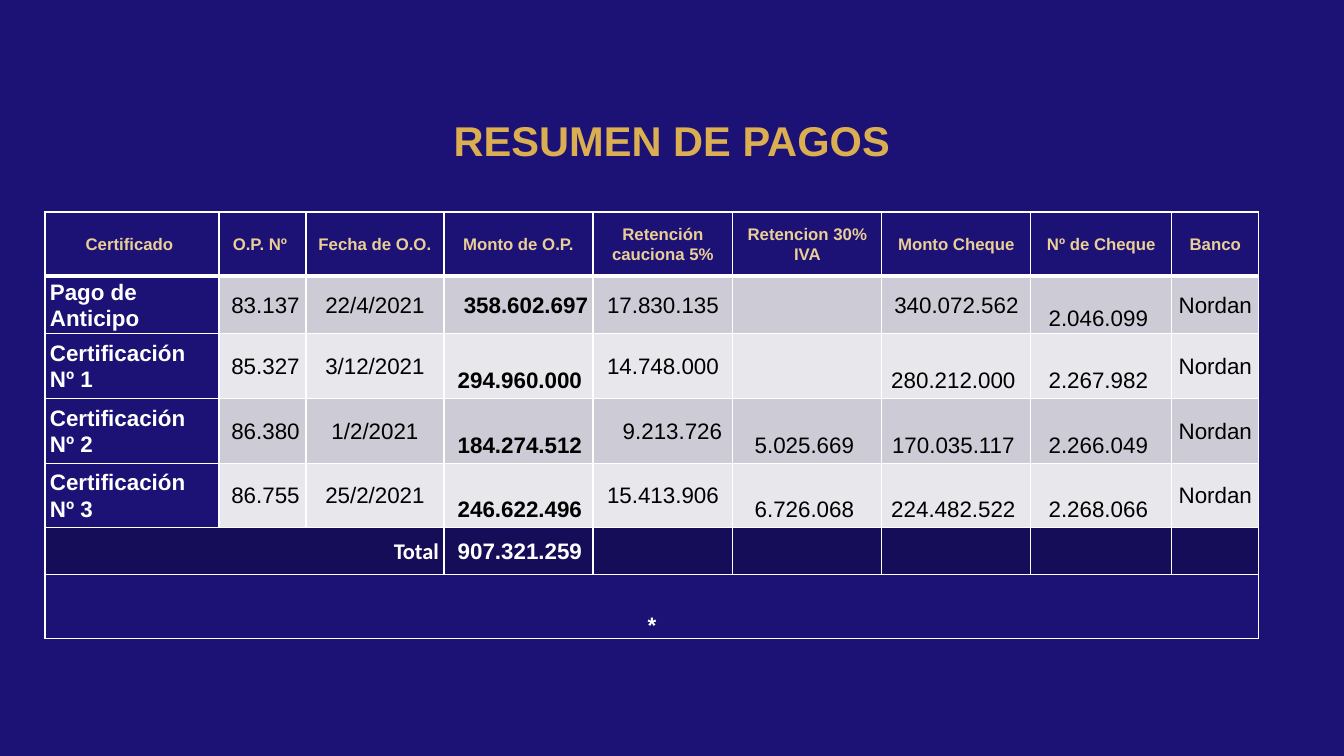
from lxml import etree
from pptx import Presentation
from pptx.dml.color import RGBColor
from pptx.enum.text import MSO_ANCHOR, PP_ALIGN
from pptx.oxml.ns import qn
from pptx.util import Emu, Pt

LEFT, CENTER, RIGHT = PP_ALIGN.LEFT, PP_ALIGN.CENTER, PP_ALIGN.RIGHT
MIDDLE, BOTTOM = MSO_ANCHOR.MIDDLE, MSO_ANCHOR.BOTTOM

# Content
TITLE = "RESUMEN DE PAGOS"
HEADINGS = ["Certificado", "O.P. Nº", "Fecha de O.O.", "Monto de O.P.",
            "Retención cauciona 5%", "Retencion 30% IVA", "Monto Cheque",
            "Nº de Cheque", "Banco"]
BANK = "Nordan"
PAYMENTS = [
    ["Pago de Anticipo", "83.137", "22/4/2021", "358.602.697", "17.830.135",
     "", "340.072.562", "2.046.099", BANK],
    ["Certificación Nº 1", "85.327", "3/12/2021", "294.960.000", "14.748.000",
     "", "280.212.000", "2.267.982", BANK],
    ["Certificación Nº 2", "86.380", "1/2/2021", "184.274.512", "9.213.726",
     "5.025.669", "170.035.117", "2.266.049", BANK],
    ["Certificación Nº 3", "86.755", "25/2/2021", "246.622.496", "15.413.906",
     "6.726.068", "224.482.522", "2.268.066", BANK],
]
TOTAL = ["Total", "", "", "907.321.259", "", "", "", "", ""]
FOOTNOTE = ["*"] + [""] * 8

COLORS = {"navy": "1C1174", "total": "150D57", "gold": "DCAE52",
          "heading": "EACE97", "white": "FFFFFF", "black": "000000",
          "dark_band": "CDCCD6", "light_band": "E8E7EB"}

# Layout in px
SLIDE_W, SLIDE_H = 1344, 756
TITLE_TOP, TITLE_H, TITLE_INSET = 108, 64, 10
TABLE_LEFT, TABLE_TOP = 45, 212
COLUMN_WIDTHS = [174, 87, 138, 149, 140, 149, 149, 141, 87]
ROW_HEIGHTS = [64, 53, 65, 65, 64, 47, 64]
SIDE_INSET, LINE_DROP, END_GAP = 5, 27, 6
ORDER_COL, AMOUNT_COL = 1, 3
DROPPED_COLS = {3, 5, 6, 7}
LEVEL_CELLS = {(0, 3), (0, 5), (0, 6), (1, 5)}
INDENTED = {(2, 4): 19}  # payment row, column: extra left inset


def px(length):
    return Emu(round(length * 914400 / 100.8))


def rgb(name):
    return RGBColor.from_string(COLORS[name])


def write(frame, text, size, color, align, bold=True, font="Arial", spacing=1.07):
    paragraph = frame.paragraphs[0]
    paragraph.alignment = align
    paragraph.line_spacing = spacing
    run = paragraph.add_run()
    run.text = text
    for name, value in {"size": Pt(size), "bold": bold, "name": font}.items():
        setattr(run.font, name, value)
    run.font.color.rgb = rgb(color)


def draw_borders(cell, top=1, bottom=1):
    properties = cell._tc.get_or_add_tcPr()
    edges = {"a:lnL": 1, "a:lnR": 1, "a:lnT": top, "a:lnB": bottom}
    for index, (tag, width) in enumerate(edges.items()):
        line = etree.Element(qn(tag), w=str(Pt(width)))
        fill = etree.SubElement(line, qn("a:solidFill"))
        etree.SubElement(fill, qn("a:srgbClr"), val=COLORS["white"])
        properties.insert(index, line)


def fill_cell(cell, text, fill, size=16, color="white", align=CENTER, bold=True,
              font="Arial", anchor=MIDDLE, left=0, right=0, drop=0):
    cell.fill.solid()
    cell.fill.fore_color.rgb = rgb(fill)
    layout = {"margin_left": px(SIDE_INSET + left), "margin_top": px(drop),
              "margin_right": px(SIDE_INSET + right), "margin_bottom": 0,
              "vertical_anchor": anchor}
    for name, value in layout.items():
        setattr(cell, name, value)
    if text:
        write(cell.text_frame, text, size, color, align, bold, font)


def payment_format(row, col):
    if col == 0:
        return {"fill": "navy", "align": LEFT}
    style = {"fill": "light_band" if row % 2 else "dark_band", "color": "black",
             "bold": col == AMOUNT_COL,
             "align": RIGHT if col == AMOUNT_COL else CENTER,
             "left": END_GAP if col == ORDER_COL else INDENTED.get((row, col), 0)}
    if col in DROPPED_COLS and (row, col) not in LEVEL_CELLS:
        style.update(drop=LINE_DROP, right=END_GAP)
    return style


def total_format(col):
    if col == AMOUNT_COL:
        return {"align": RIGHT, "right": END_GAP}
    return {"align": RIGHT, "font": "Calibri"}


def main():
    deck = Presentation()
    deck.slide_width, deck.slide_height = px(SLIDE_W), px(SLIDE_H)
    slide = deck.slides.add_slide(deck.slide_layouts[6])
    slide.background.fill.solid()
    slide.background.fill.fore_color.rgb = rgb("navy")

    # Title
    title = slide.shapes.add_textbox(0, px(TITLE_TOP), px(SLIDE_W), px(TITLE_H)).text_frame
    title.word_wrap = True
    title.vertical_anchor = MIDDLE
    for side in ("left", "top", "right", "bottom"):
        setattr(title, f"margin_{side}", px(TITLE_INSET))
    write(title, TITLE, 29.7, "gold", CENTER, spacing=1.0)

    # Table grid
    payments = slide.shapes.add_table(
        len(ROW_HEIGHTS), len(COLUMN_WIDTHS), px(TABLE_LEFT), px(TABLE_TOP),
        px(sum(COLUMN_WIDTHS)), px(sum(ROW_HEIGHTS))).table
    payments.first_row = payments.horz_banding = False
    for column, width in zip(payments.columns, COLUMN_WIDTHS):
        column.width = px(width)
    for row, height in zip(payments.rows, ROW_HEIGHTS):
        row.height = px(height)

    # Table rows
    total_row = len(PAYMENTS) + 1
    footnote_row = total_row + 1
    for col, heading in enumerate(HEADINGS):
        fill_cell(payments.cell(0, col), heading, "navy", size=12, color="heading",
                  right=SIDE_INSET if col < 2 else 0)
        for row, payment in enumerate(PAYMENTS):
            fill_cell(payments.cell(row + 1, col), payment[col], **payment_format(row, col))
        fill_cell(payments.cell(total_row, col), TOTAL[col], "total", **total_format(col))
        fill_cell(payments.cell(footnote_row, col), FOOTNOTE[col], "navy", anchor=BOTTOM)
        for row in range(len(ROW_HEIGHTS)):
            draw_borders(payments.cell(row, col), top=3 if row == 1 else 1,
                         bottom=3 if row == 0 else 1)

    # Merged cells
    payments.cell(total_row, 0).merge(payments.cell(total_row, AMOUNT_COL - 1))
    payments.cell(footnote_row, 0).merge(payments.cell(footnote_row, len(HEADINGS) - 1))

    deck.save("out.pptx")


if __name__ == "__main__":
    main()
